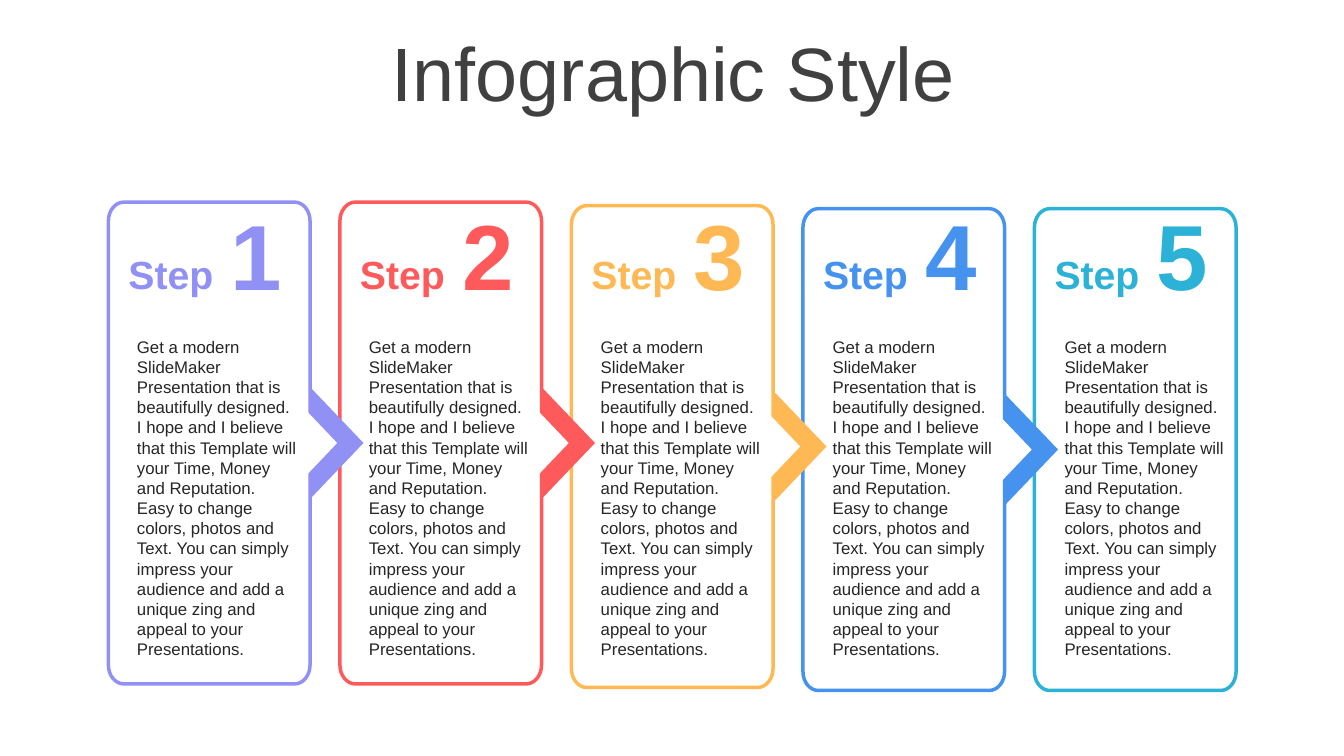
"""Builds a slide of five step cards linked by chevrons."""
import pptx
import pptx.util
import pptx.dml.color
import pptx.enum.shapes
import pptx.enum.text
import pptx.oxml.ns

ALIGN = pptx.enum.text.PP_ALIGN
ANCHOR = pptx.enum.text.MSO_ANCHOR
FIT = pptx.enum.text.MSO_AUTO_SIZE

SLIDE_W = pptx.util.Inches(13.33)
SLIDE_H = pptx.util.Inches(7.5)
UNIT = SLIDE_H / 75
CARD_LEFT, LAST_LEFT = 10.75, 102.6
CARD_W, CARD_H = 20, 47.8
CORNER_W, CORNER_H = 1.53, 1.87
CURVE = 0.45
TIP_W, TIP_H = 2.95, 6.2
ARROW_W, ARROW_H = 11.1, 5.3
BODY_LEFT, BODY_PITCH = 12.6, 23

COLORS = {
    "white": "FFFFFF", "title": "404040", "body": "262626",
    "violet": "9191F5", "red": "FE5A5B", "amber": "FFB954",
    "blue": "4592EF", "teal": "2CB2D7",
}
STEPS = [("violet", 20.05), ("red", 20.05), ("amber", 20.4), ("blue", 20.7),
         ("teal", 20.7)]
PITCH = (LAST_LEFT - CARD_LEFT) / (len(STEPS) - 1)
BODY = (
    "Get a modern SlideMaker Presentation that is beautifully designed. "
    "I hope and I believe that this Template will your Time, Money and Reputation. "
    "Easy to change colors, photos and Text. You can simply impress your audience "
    "and add a unique zing and appeal to your Presentations."
)


def grid(*values):
    """Turn grid units into slide lengths."""
    return [pptx.util.Emu(round(v * UNIT)) for v in values]


def rgb(name):
    """Look up a colour by name."""
    return pptx.dml.color.RGBColor.from_string(COLORS[name])


def add_text(shapes, box, text, size, color, bold=False, align=ALIGN.LEFT,
             anchor=ANCHOR.TOP, fit=FIT.SHAPE_TO_FIT_TEXT):
    """Add a wrapped one-paragraph text box and return its paragraph."""
    tf = shapes.add_textbox(*grid(*box)).text_frame
    tf.word_wrap = True
    tf.auto_size = fit
    tf.vertical_anchor = anchor
    p = tf.paragraphs[0]
    p.text = text
    p.alignment = align
    p.font.name = "Arial"
    p.font.size = pptx.util.Pt(size)
    p.font.bold = bold
    p.font.color.rgb = rgb(color)
    return p


def card_outline(x, y, pointed):
    """List the outline points of a card and the indexes where curves begin."""
    right, bottom, middle = x + CARD_W, y + CARD_H, y + CARD_H / 2
    corners = [(right, y, -1, 1), (right, bottom, -1, -1),
               (x, bottom, 1, -1), (x, y, 1, 1)]
    points, curves = [(x + CORNER_W, y)], []
    for i, (cx, cy, sx, sy) in enumerate(corners):
        dx, dy = sx * CORNER_W, sy * CORNER_H
        arc = [(cx + dx, cy), (cx + dx * CURVE, cy),
               (cx, cy + dy * CURVE), (cx, cy + dy)]
        if i % 2:
            arc.reverse()
        points.append(arc[0])
        curves.append(len(points))
        points += arc[1:]
        if i == 0 and pointed:
            points += [(right, middle - TIP_H / 2), (right + TIP_W, middle),
                       (right, middle + TIP_H / 2)]
    return points, curves


def bend(sp, curves):
    """Join each three segments that begin at the given indexes into one curve."""
    qn = pptx.oxml.ns.qn
    lines = list(sp.element.iter(qn("a:lnTo")))
    for start in curves:
        first, *rest = lines[start - 1:start + 2]
        first.tag = qn("a:cubicBezTo")
        for line in rest:
            first.append(line[0])
            line.getparent().remove(line)


def add_card(shapes, x, y, color, pointed):
    """Add an outlined card."""
    outline, curves = card_outline(x, y, pointed)
    points = [grid(*point) for point in outline]
    builder = shapes.build_freeform(*points[0])
    builder.add_line_segments(points[1:], close=True)
    sp = builder.convert_to_shape()
    bend(sp, curves)
    sp.shadow.inherit = False
    sp.fill.solid()
    sp.fill.fore_color.rgb = rgb("white")
    sp.line.color.rgb = rgb(color)
    sp.line.width = pptx.util.Pt(2.5)


def add_arrow(shapes, x, y, color):
    """Add the triangle that points from a card to the next one."""
    left = x + CARD_W + (ARROW_H - ARROW_W) / 2
    top = y + (CARD_H - ARROW_H) / 2
    sp = shapes.add_shape(pptx.enum.shapes.MSO_SHAPE.ISOSCELES_TRIANGLE,
                          *grid(left, top, ARROW_W, ARROW_H))
    sp.rotation = 90
    sp.shadow.inherit = False
    sp.fill.solid()
    sp.fill.fore_color.rgb = rgb(color)
    sp.line.fill.background()


def add_heading(shapes, x, number, color):
    """Add the word Step and its large number."""
    for text, box, size in [("Step", (x + 0.9, 24.3, 10.6, 5.7), 28),
                            (str(number), (x + 9.4, 19.1, 10.6, 12.1), 66)]:
        add_text(shapes, box, text, size, color, True, ALIGN.CENTER, ANCHOR.MIDDLE)


def main():
    """Build and save the slide."""
    prs = pptx.Presentation()
    prs.slide_width, prs.slide_height = SLIDE_W, SLIDE_H
    slide = prs.slides.add_slide(prs.slide_layouts[6])

    title = add_text(slide.shapes, (3.5, 3.7, 126.6, 7.9), "Infographic Style", 54,
                     "title", align=ALIGN.CENTER, anchor=ANCHOR.MIDDLE, fit=FIT.NONE)
    title.line_spacing = 0.9

    columns = [(CARD_LEFT + i * PITCH, y, color, i + 1)
               for i, (color, y) in enumerate(STEPS)]
    for x, y, color, number in reversed(columns):
        pointed = number < len(STEPS)
        shapes = slide.shapes.add_group_shape().shapes if pointed else slide.shapes
        if pointed:
            add_arrow(shapes, x, y, color)
        add_card(shapes, x, y, color, pointed)
    for x, y, color, number in columns:
        add_heading(slide.shapes.add_group_shape().shapes, x, number, color)
    for i in range(len(STEPS)):
        add_text(slide.shapes, (BODY_LEFT + i * BODY_PITCH, 32.9, 17.8, 33.3),
                 BODY, 12, "body")

    prs.save("out.pptx")


if __name__ == "__main__":
    main()
